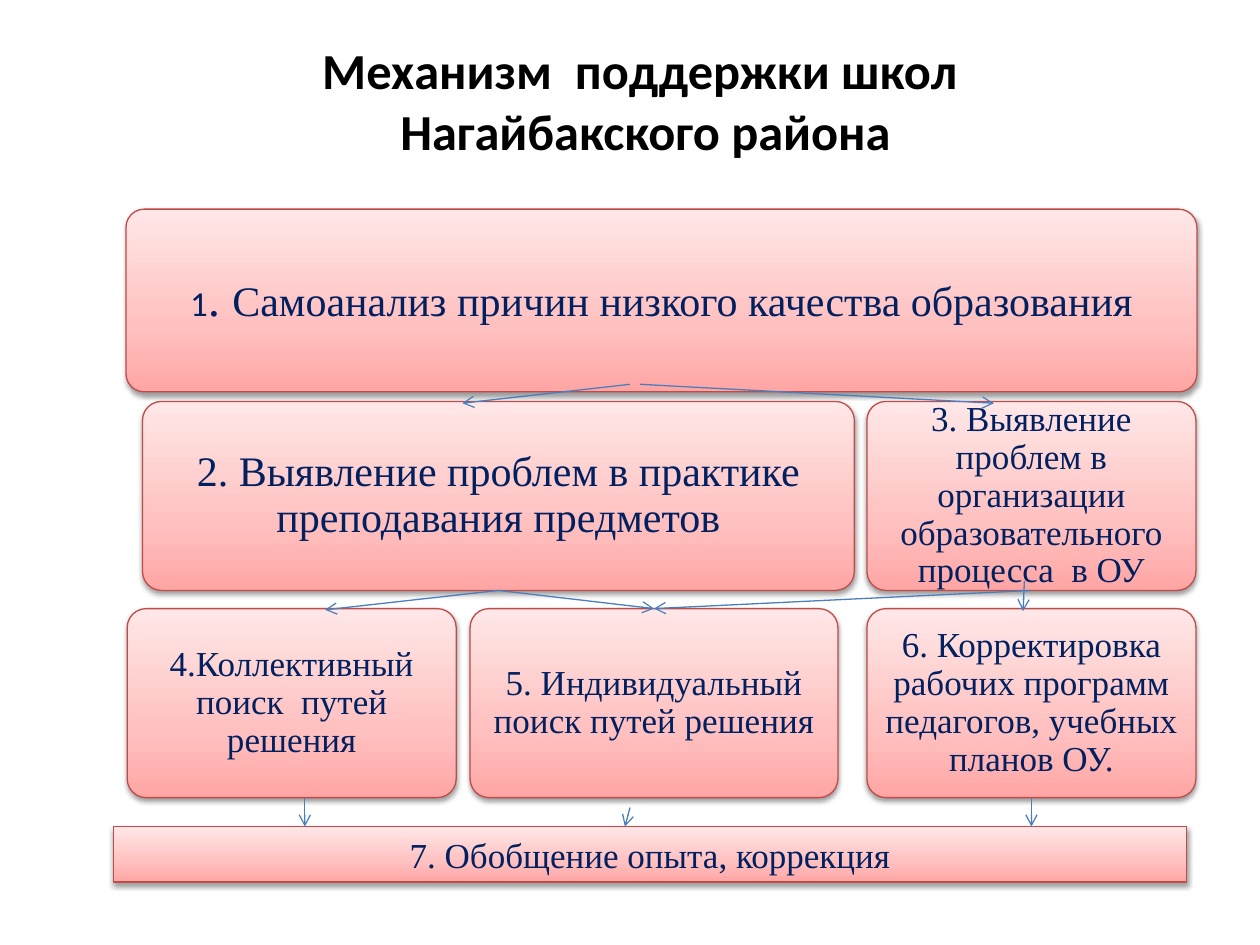
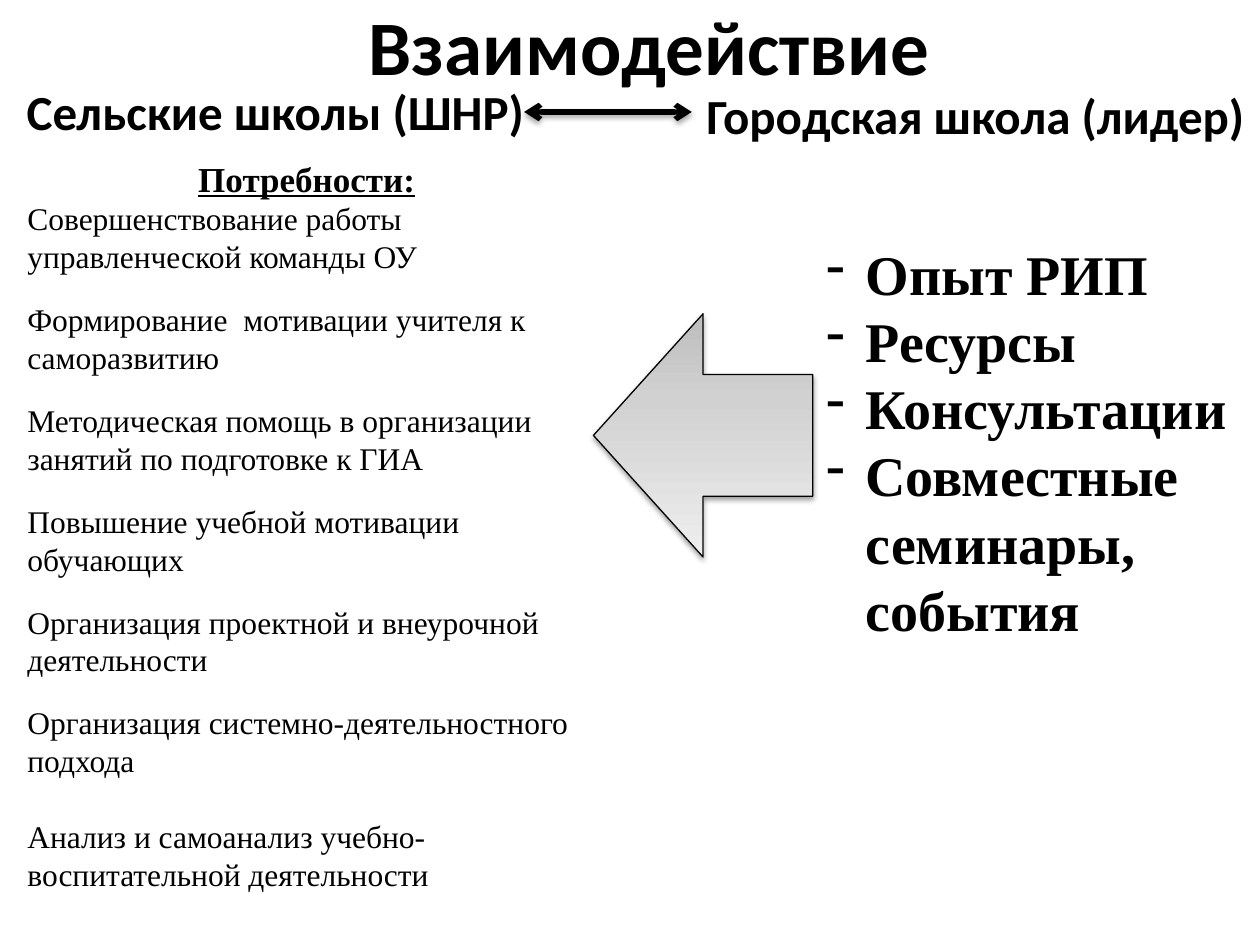
from copy import deepcopy
from dataclasses import dataclass

from lxml.etree import SubElement
from pptx import Presentation
from pptx.dml.color import RGBColor
from pptx.enum.shapes import MSO_CONNECTOR, MSO_SHAPE
from pptx.enum.text import MSO_ANCHOR, PP_ALIGN
from pptx.oxml.ns import qn
from pptx.util import Pt


@dataclass(frozen=True)
class Theme:
    sans: str = "Calibri"
    serif: str = "Times New Roman"
    ink: str = "000000"
    navy: str = "002060"
    link: str = "4B7EBC"
    box_line: str = "BF4C48"
    pink: tuple = ("FFA6A5", "FFC0BF", "FFE7E7")
    grey: tuple = ("BDBDBD", "D1D1D1", "EEEEEE")
    title: float = 28.8
    big_title: float = 44
    heading: float = 28
    offer: float = 32
    step_large: float = 24
    step: float = 20
    need: float = 18


theme = Theme()


def write(frame, paragraphs, size, font=theme.serif, color=theme.ink,
          align=PP_ALIGN.CENTER, anchor=MSO_ANCHOR.MIDDLE, spacing=None, **font_format):
    """Fill a frame; a paragraph is a string or a list of (text, size, font) runs."""
    frame.word_wrap = True
    frame.vertical_anchor = anchor
    for number, content in enumerate(paragraphs):
        paragraph = frame.paragraphs[0] if number == 0 else frame.add_paragraph()
        paragraph.alignment = align
        paragraph.line_spacing = spacing
        parts = [(content, size, font)] if isinstance(content, str) else content
        for text, run_size, run_font in parts:
            for index, line in enumerate(text.split("\n")):
                if index:
                    paragraph.add_line_break()
                run = paragraph.add_run()
                run.text = line
                run.font.color.rgb = RGBColor.from_string(color)
                values = {"size": Pt(run_size), "name": run_font, **font_format}
                for name, value in values.items():
                    setattr(run.font, name, value)


def paint(shape, line_color, width, stops=(), shadow=None):
    """Set line, gradient and shadow; shadow is its opacity in percent."""
    shape.line.color.rgb = RGBColor.from_string(line_color)
    shape.line.width = Pt(width)
    properties = shape.element.spPr
    if stops:
        shape.fill.gradient()
        shape.fill.gradient_angle = 90
        stop_list = properties.find(qn("a:gradFill")).find(qn("a:gsLst"))
        stop_list.insert(1, deepcopy(stop_list[0]))
        for stop, position, color in zip(shape.fill.gradient_stops, (0, 0.35, 1), stops):
            stop.position = position
            stop.color.rgb = RGBColor.from_string(color)
    effects = SubElement(properties, qn("a:effectLst"))
    if shadow:
        outer = SubElement(effects, qn("a:outerShdw"), blurRad=str(Pt(3.1)),
                           dist=str(Pt(1.6)), dir="5400000", rotWithShape="0")
        black = SubElement(outer, qn("a:srgbClr"), val=theme.ink)
        SubElement(black, qn("a:alpha"), val=str(shadow * 1000))


deck = Presentation()
deck.slide_width, deck.slide_height = Pt(720), Pt(540)
mechanism, interaction = (deck.slides.add_slide(deck.slide_layouts[6]) for _ in range(2))

# Titles and column headings
for slide, text, place, size, anchor in (
    (mechanism, "Механизм  поддержки школ \nНагайбакского района",
     (48, 18, 642, 78), theme.title, MSO_ANCHOR.MIDDLE),
    (interaction, "Взаимодействие", (47, -19.5, 648, 90), theme.big_title, MSO_ANCHOR.MIDDLE),
    (interaction, "Сельские школы (ШНР)", (0, 43.2, 314.6, 41), theme.heading, MSO_ANCHOR.TOP),
    (interaction, "Городская школа (лидер)", (373, 45.4, 368.6, 41), theme.heading,
     MSO_ANCHOR.TOP),
):
    heading = slide.shapes.add_textbox(*map(Pt, place))
    write(heading.text_frame, [text], size, theme.sans, anchor=anchor, bold=True)

# Slide 1: steps of the mechanism
row_2, row_3, row_height = 229.4, 347.8, 108
right_column, side_width = 495.4, 188
self_analysis = [("1", theme.step, theme.sans), (". ", theme.heading, theme.serif),
                 ("Самоанализ причин низкого качества образования",
                  theme.step_large, theme.serif)]
steps = {}
for number, (text, place, size, inset) in enumerate((
    (self_analysis, (72, 119.5, 612, 104.4), theme.step_large, 6),
    ("2. Выявление проблем в практике преподавания предметов",
     (81.4, row_2, 406.8, row_height), theme.step_large, 7.2),
    ("3. Выявление проблем в организации образовательного процесса  в ОУ",
     (right_column, row_2, side_width, row_height), theme.step, 6),
    ("4.Коллективный поиск  путей решения",
     (72.7, row_3, side_width, row_height), theme.step, 6),
    ("5. Индивидуальный поиск путей решения",
     (268.6, row_3, 210.2, row_height), theme.step, 6),
    ("6. Корректировка рабочих программ педагогов, учебных планов ОУ.",
     (right_column, row_3, side_width, row_height), theme.step, 6),
), start=1):
    step = mechanism.shapes.add_shape(MSO_SHAPE.ROUNDED_RECTANGLE, *map(Pt, place))
    step.adjustments[0] = 0.1
    paint(step, theme.box_line, 0.75, theme.pink, shadow=38)
    for side in ("left", "top", "right", "bottom"):
        setattr(step.text_frame, f"margin_{side}", Pt(inset))
    write(step.text_frame, [text], size, color=theme.navy, spacing=0.9)
    steps[number] = step

summary_top = 472.3
summary = mechanism.shapes.add_shape(
    MSO_SHAPE.RECTANGLE, Pt(64.8), Pt(summary_top), Pt(613.4), Pt(31.7))
paint(summary, theme.box_line, 0.75, theme.pink, shadow=38)
write(summary.text_frame, ["7. Обобщение опыта, коррекция"], theme.step, color=theme.navy)

# Arrows: an end is a point, or a step number joined at its bottom (start) or top (end)
step_link = (mechanism, theme.link, 0.75, ("tailEnd",), None)
exchange = (interaction, theme.ink, 3, ("headEnd", "tailEnd"), 35)
for start, end, (slide, color, width, heads, shadow) in (
    ((360, 219.6), (264.2, 230.4), step_link),
    ((365.8, 219.6), (568, 230.4), step_link),
    (2, (185.8, 348.5), step_link),
    (2, 5, step_link),
    ((585.4, 332), (584.6, 349.2), step_link),
    (3, 5, step_link),
    ((174.2, 455.8), (174.2, summary_top), step_link),
    ((360, 461.5), (357.1, summary_top), step_link),
    (6, (589.4, summary_top), step_link),
    ((299.5, 64), (395.3, 64), exchange),
):
    start_point = (0, 0) if start in steps else start
    end_point = (0, 0) if end in steps else end
    arrow = slide.shapes.add_connector(
        MSO_CONNECTOR.STRAIGHT, *map(Pt, (*start_point, *end_point)))
    if start in steps:
        arrow.begin_connect(steps[start], 2)
    if end in steps:
        arrow.end_connect(steps[end], 0)
    paint(arrow, color, width, shadow=shadow)
    for head in heads:
        SubElement(arrow.element.spPr.find(qn("a:ln")), qn(f"a:{head}"), type="arrow")

# Slide 2: needs of the rural schools
needs = interaction.shapes.add_textbox(Pt(8.6), Pt(86.4), Pt(333.4), Pt(489.6)).text_frame
write(needs, [
    "Потребности:",
    "Совершенствование работы управленческой команды ОУ",
    "Формирование  мотивации учителя к саморазвитию",
    "Методическая помощь в организации занятий по подготовке к ГИА",
    "Повышение учебной мотивации обучающих",
    "Организация проектной и внеурочной деятельности",
    "Организация системно-деятельностного подхода",
    "Анализ и самоанализ учебно-воспитательной деятельности",
], theme.need, align=PP_ALIGN.LEFT, anchor=MSO_ANCHOR.TOP)
needs_title, first_need, *other_needs = needs.paragraphs
needs_title.alignment = PP_ALIGN.CENTER
for name, value in {"size": Pt(theme.step), "bold": True, "underline": True}.items():
    setattr(needs_title.runs[0].font, name, value)
for need in other_needs:
    need.space_before = Pt(14.4)
other_needs[-1].space_before = Pt(21.6)

# Slide 2: what the leading school offers
offers = interaction.shapes.add_textbox(Pt(465), Pt(133.2), Pt(253.4), Pt(239.8)).text_frame
write(offers, ["Опыт РИП", "Ресурсы", "Консультации", "Совместные семинары, события"],
      theme.offer, align=PP_ALIGN.LEFT, anchor=MSO_ANCHOR.TOP, bold=True)
for offer in offers.paragraphs:
    settings = offer.runs[0].font and offer._p.get_or_add_pPr()
    settings.set("marL", str(Pt(22.5)))
    settings.set("indent", str(Pt(-22.5)))
    SubElement(settings, qn("a:buChar"), char="-")

support = interaction.shapes.add_shape(
    MSO_SHAPE.RIGHT_ARROW, Pt(339.1), Pt(179.3), Pt(125.3), Pt(139))
support.rotation = 180
paint(support, theme.ink, 0.75, theme.grey, shadow=38)

deck.save("out.pptx")
